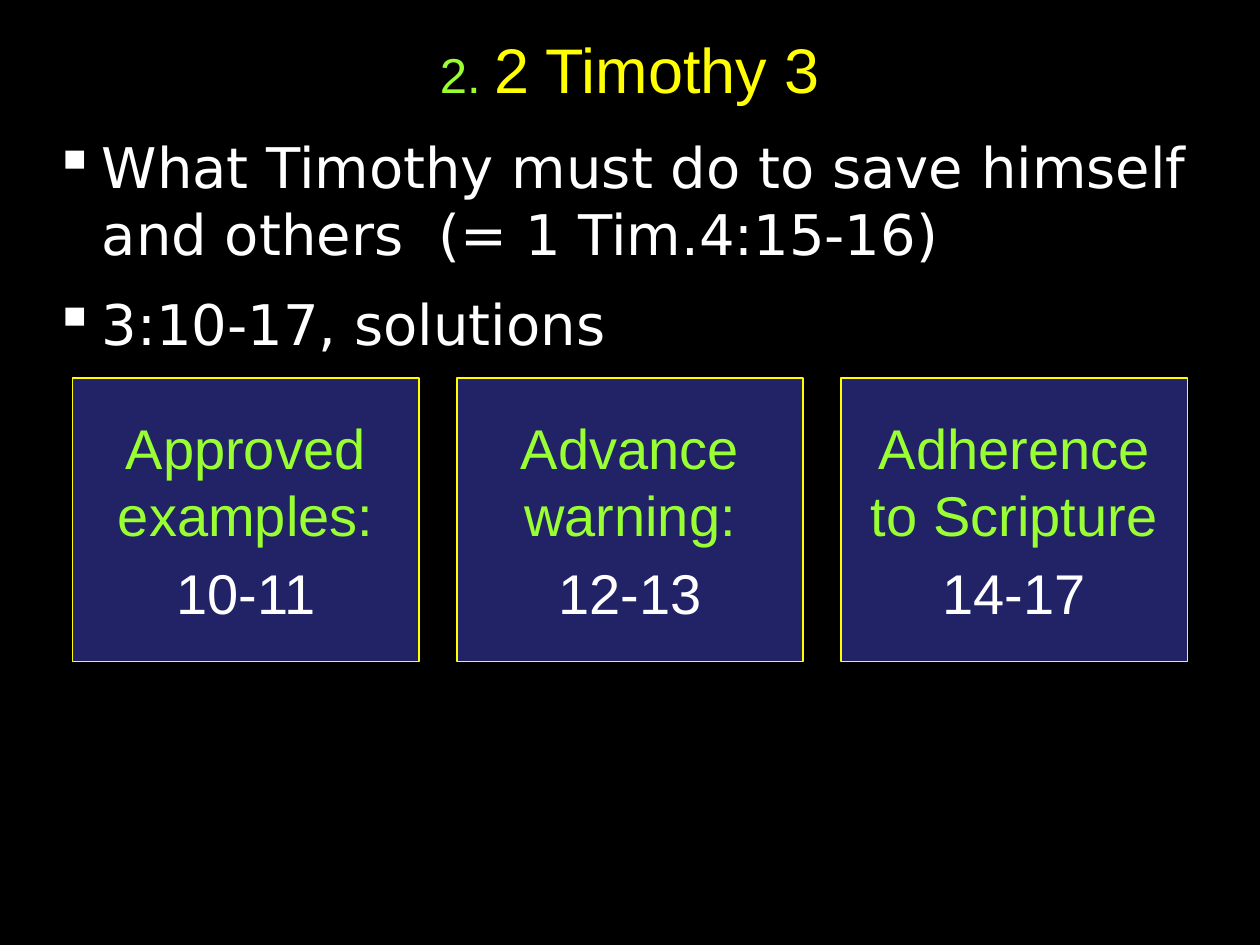
"""Build the 2 Timothy 3 slide with its outline and three solution cards."""
from lxml import etree
from pptx import Presentation
from pptx.dml.color import RGBColor
from pptx.enum.shapes import MSO_SHAPE
from pptx.enum.text import MSO_ANCHOR, PP_ALIGN
from pptx.oxml.ns import qn
from pptx.util import Inches, Pt

RECTANGLE = MSO_SHAPE.RECTANGLE
MIDDLE, TOP = MSO_ANCHOR.MIDDLE, MSO_ANCHOR.TOP
CENTER = PP_ALIGN.CENTER
SLIDE_WIDTH, SLIDE_HEIGHT = 10, 7.5
CARD_WIDTH, CARD_GAP = 2.75, 0.3


def rgb(code):
    return RGBColor.from_string(code)


class TimothySlide:
    """Hold the style and the current slide, and add each kind of element."""

    BLACK, WHITE, YELLOW = "000000", "FFFFFF", "FFFF00"
    GREEN, NAVY = "99FF33", "222267"
    HEADING_FONT, BODY_FONT = "Arial", "DejaVu Sans"
    BODY_SIZE = 32

    def __init__(self, presentation):
        self.slide = presentation.slides.add_slide(presentation.slide_layouts[6])
        background = self.slide.background.fill
        background.solid()
        background.fore_color.rgb = rgb(self.BLACK)

    def add_run(self, paragraph, wording, size, font, color):
        run = paragraph.add_run()
        run.text = wording
        run.font.size = Pt(size)
        run.font.name = font
        run.font.color.rgb = rgb(color)

    def text_frame(self, left, top, width, height, anchor):
        box = self.slide.shapes.add_textbox(
            Inches(left), Inches(top), Inches(width), Inches(height))
        frame = box.text_frame
        frame.word_wrap = True
        frame.vertical_anchor = anchor
        return frame

    def add_title(self, number, wording):
        heading = self.text_frame(0.5, 0.08, 9, 0.92, MIDDLE).paragraphs[0]
        heading.alignment = CENTER
        self.add_run(heading, number, 28, self.HEADING_FONT, self.GREEN)
        self.add_run(heading, wording, 36, self.HEADING_FONT, self.YELLOW)

    def add_bullets(self, points):
        frame = self.text_frame(0.33, 1, 9.33, 6.25, TOP)
        for index, point in enumerate(points):
            item = frame.add_paragraph() if index else frame.paragraphs[0]
            item.space_before = Pt(6 if index else 0)
            item.space_after = Pt(7)
            properties = item._p.get_or_add_pPr()
            properties.set("marL", str(Inches(0.38)))
            properties.set("indent", str(-Inches(0.38)))
            etree.SubElement(properties, qn("a:buChar")).set("char", "▪")
            self.add_run(item, point, self.BODY_SIZE, self.BODY_FONT, self.WHITE)

    def add_card(self, left, lines, verses):
        card = self.slide.shapes.add_shape(
            RECTANGLE, Inches(left), Inches(3), Inches(CARD_WIDTH), Inches(2.25))
        card.shadow.inherit = False
        card.fill.solid()
        card.fill.fore_color.rgb = rgb(self.NAVY)
        card.line.color.rgb = rgb(self.YELLOW)
        card.line.width = Pt(1)
        frame = card.text_frame
        frame.word_wrap = True
        frame.vertical_anchor = MIDDLE
        solution, reference = frame.paragraphs[0], frame.add_paragraph()
        solution.alignment = reference.alignment = CENTER
        solution.space_after = Pt(6)
        for index, line in enumerate(lines):
            if index:
                solution.add_line_break()
            self.add_run(solution, line, self.BODY_SIZE, self.HEADING_FONT, self.GREEN)
        self.add_run(reference, verses, self.BODY_SIZE, self.HEADING_FONT, self.WHITE)


def main():
    presentation = Presentation()
    presentation.slide_width = Inches(SLIDE_WIDTH)
    presentation.slide_height = Inches(SLIDE_HEIGHT)
    page = TimothySlide(presentation)
    page.add_title("2. ", "2 Timothy 3")
    page.add_bullets([
        "What Timothy must do to save himself and others  (= 1 Tim.4:15-16)",
        "3:10-17, solutions",
    ])
    solutions = [
        (["Approved", "examples:"], "10-11"),
        (["Advance warning:"], "12-13"),
        (["Adherence to Scripture"], "14-17"),
    ]
    pitch = CARD_WIDTH + CARD_GAP
    first_left = (SLIDE_WIDTH - len(solutions) * pitch + CARD_GAP) / 2
    for column, (lines, verses) in enumerate(solutions):
        page.add_card(first_left + column * pitch, lines, verses)
    presentation.save("out.pptx")


if __name__ == "__main__":
    main()
